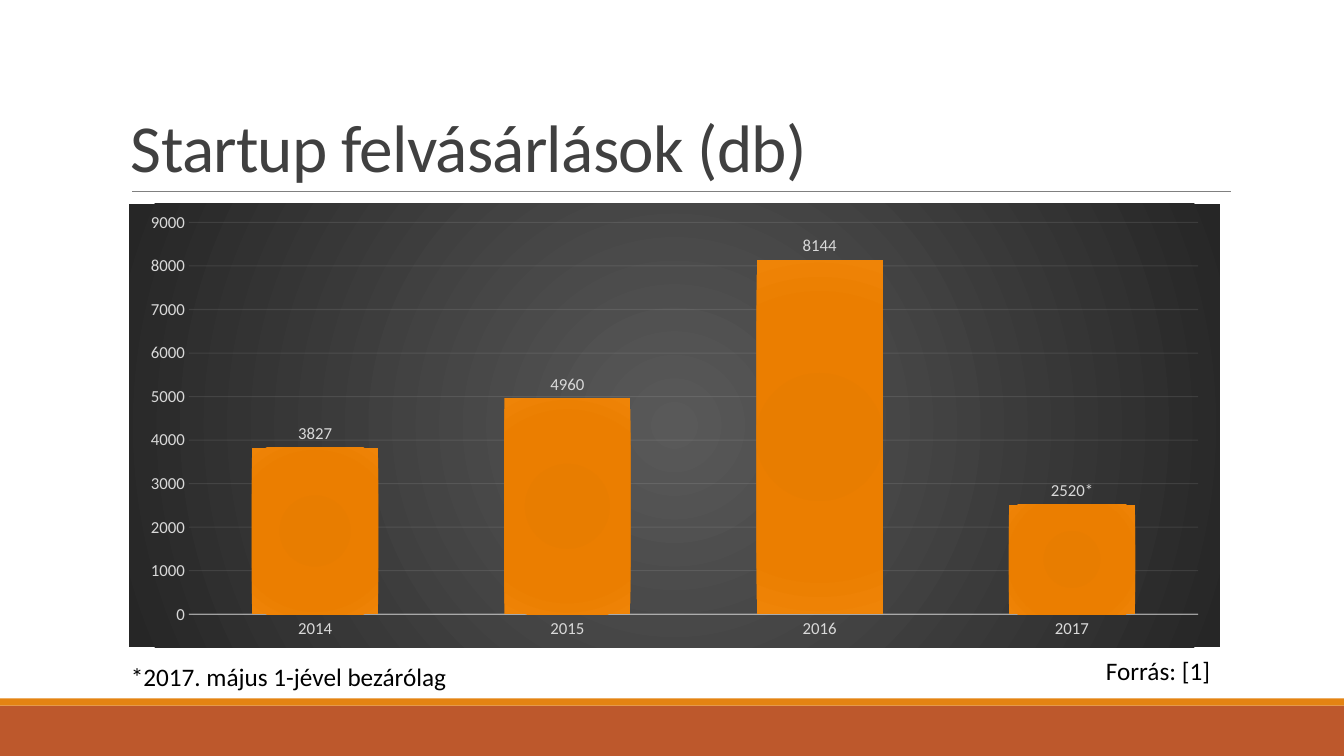
from dataclasses import dataclass

from lxml.etree import SubElement
from pptx import Presentation
from pptx.chart.chart import Chart
from pptx.chart.data import CategoryChartData
from pptx.dml.color import RGBColor
from pptx.enum.chart import XL_CHART_TYPE, XL_LABEL_POSITION, XL_TICK_MARK
from pptx.enum.shapes import MSO_CONNECTOR, MSO_SHAPE
from pptx.enum.text import MSO_ANCHOR, MSO_AUTO_SIZE, PP_ALIGN
from pptx.oxml import parse_xml
from pptx.oxml.ns import nsdecls, qn
from pptx.slide import Slide
from pptx.text.text import Font
from pptx.util import Emu, Pt

EMU_PER_PX = 9144
FONT_NAME = "Calibri"
RUST = RGBColor(0xBD, 0x58, 0x2C)
ORANGE = RGBColor(0xE4, 0x83, 0x12)
GREY = RGBColor(0x80, 0x80, 0x80)
CHARCOAL = RGBColor(0x40, 0x40, 0x40)
BLACK = RGBColor(0, 0, 0)
LABEL_GREY = RGBColor(0xD9, 0xD9, 0xD9)
OFF_WHITE = RGBColor(0xF2, 0xF2, 0xF2)
BACKDROP_STOPS = {0: RGBColor(0x59, 0x59, 0x59), 100: RGBColor(0x26, 0x26, 0x26)}
COLUMN_STOPS = {
    0: RGBColor(0xE5, 0x7B, 0x00),
    34: RGBColor(0xE8, 0x7D, 0x00),
    70: RGBColor(0xEB, 0x7E, 0x00),
    100: RGBColor(0xEF, 0x84, 0x07),
}
ACQUISITIONS = {"2014": 3827, "2015": 4960, "2016": 8144, "2017": 2520}
PARTIAL_YEAR_LABEL = "2520*"


@dataclass(frozen=True)
class Box:
    """Place and size in px."""

    left: int
    top: int
    width: int
    height: int

    def emu(self) -> tuple[Emu, Emu, Emu, Emu]:
        """Return the four lengths in EMU."""
        return px(self.left), px(self.top), px(self.width), px(self.height)


@dataclass(frozen=True)
class Band:
    """A coloured strip across the foot of the slide."""

    box: Box
    color: RGBColor


@dataclass(frozen=True)
class Note:
    """A line of text below the chart."""

    box: Box
    text: str


BANDS = (
    Band(Box(0, 700, 1333, 50), RUST),
    Band(Box(0, 693, 1333, 7), ORANGE),
)
NOTES = (
    Note(Box(120, 651, 550, 40), "*2017. május 1-jével bezárólag"),
    Note(Box(1087, 645, 265, 40), "Forrás: [1]"),
)


def px(length: int) -> Emu:
    """Turn px into EMU."""
    return Emu(length * EMU_PER_PX)


def style_font(font: Font, size: float, color: RGBColor) -> None:
    """Set the typeface, size and colour of a font."""
    font.name = FONT_NAME
    font.size = Pt(size)
    font.color.rgb = color


def add_text(slide: Slide, box: Box, text: str, *, size: float = 18,
             color: RGBColor = BLACK, anchor: MSO_ANCHOR = MSO_ANCHOR.TOP,
             autosize: MSO_AUTO_SIZE = MSO_AUTO_SIZE.SHAPE_TO_FIT_TEXT,
             line_spacing: float = 1.0, tracking: float = 0) -> None:
    """Add a left-aligned text box."""
    frame = slide.shapes.add_textbox(*box.emu()).text_frame
    frame.word_wrap = True
    frame.auto_size = autosize
    frame.vertical_anchor = anchor
    paragraph = frame.paragraphs[0]
    paragraph.alignment = PP_ALIGN.LEFT
    paragraph.line_spacing = line_spacing
    run = paragraph.add_run()
    run.text = text
    style_font(run.font, size, color)
    if tracking:
        run.font._element.set("spc", str(round(tracking * 100)))


def add_band(slide: Slide, band: Band) -> None:
    """Add a borderless strip."""
    strip = slide.shapes.add_shape(MSO_SHAPE.RECTANGLE, *band.box.emu())
    strip.shadow.inherit = False
    strip.fill.solid()
    strip.fill.fore_color.rgb = band.color
    strip.line.fill.background()


def add_rule(slide: Slide, left: int, right: int, top: int) -> None:
    """Add the thin line below the title."""
    rule = slide.shapes.add_connector(
        MSO_CONNECTOR.STRAIGHT, px(left), px(top), px(right), px(top))
    rule.line.color.rgb = GREY
    rule.line.width = Pt(0.5)
    SubElement(rule.element.find(qn("p:spPr")), qn("a:effectLst"))


def radial_fill(stops: dict[int, RGBColor], center: int) -> str:
    """Return the XML of a circular gradient."""
    stop_list = "".join(
        f'<a:gs pos="{at * 1000}"><a:srgbClr val="{color}"/></a:gs>'
        for at, color in stops.items())
    edges = " ".join(f'{side}="{center * 1000}"' for side in "ltrb")
    return (f'<a:gradFill {nsdecls("a")} rotWithShape="1"><a:gsLst>{stop_list}</a:gsLst>'
            f'<a:path path="circle"><a:fillToRect {edges}/></a:path></a:gradFill>')


def set_opacity(chart: Chart, line_path: str, percent: int) -> None:
    """Make the line of a chart part translucent."""
    for color in chart.element.xpath(f".//{line_path}/c:spPr/a:ln//a:srgbClr"):
        SubElement(color, qn("a:alpha"), val=str(percent * 1000))


def style_axes(chart: Chart) -> None:
    """Format both axes and the gridlines."""
    years, counts = chart.category_axis, chart.value_axis
    for axis in (years, counts):
        axis.major_tick_mark = axis.minor_tick_mark = XL_TICK_MARK.NONE
        style_font(axis.tick_labels.font, 12, LABEL_GREY)
    counts.minimum_scale, counts.maximum_scale, counts.major_unit = 0, 9000, 1000
    counts.format.line.fill.background()
    for line, width in ((years.format.line, 1), (counts.major_gridlines.format.line, 0.75)):
        line.color.rgb = OFF_WHITE
        line.width = Pt(width)
    set_opacity(chart, "c:catAx", 54)
    set_opacity(chart, "c:majorGridlines", 10)


def style_columns(chart: Chart) -> None:
    """Format the columns and their labels."""
    plot = chart.plots[0]
    plot.vary_by_categories = False
    plot.gap_width, plot.overlap = 100, -24
    columns = plot.series[0]
    columns.format.fill.solid()
    solid = chart.element.xpath(".//c:ser/c:spPr/a:solidFill")[0]
    solid.getparent().replace(solid, parse_xml(radial_fill(COLUMN_STOPS, 100)))
    labels = columns.data_labels
    labels.show_value = True
    labels.position = XL_LABEL_POSITION.OUTSIDE_END
    style_font(labels.font, 12, LABEL_GREY)
    partial_year = columns.points[len(ACQUISITIONS) - 1].data_label
    partial_year.position = XL_LABEL_POSITION.OUTSIDE_END
    run = partial_year.text_frame.paragraphs[0].add_run()
    run.text = PARTIAL_YEAR_LABEL
    style_font(run.font, 12, LABEL_GREY)


def add_acquisitions_chart(slide: Slide, box: Box) -> None:
    """Add the column chart on its dark backdrop."""
    data = CategoryChartData()
    data.categories = list(ACQUISITIONS)
    data.add_series("Series 1", list(ACQUISITIONS.values()))
    chart = slide.shapes.add_chart(XL_CHART_TYPE.COLUMN_CLUSTERED, *box.emu(), data).chart
    chart.has_title = chart.has_legend = False
    style_font(chart.font, 10, BLACK)
    backdrop = parse_xml(f'<c:spPr {nsdecls("c", "a")}>{radial_fill(BACKDROP_STOPS, 50)}'
                         '<a:ln><a:noFill/></a:ln></c:spPr>')
    chart.element.find(qn("c:chart")).addnext(backdrop)
    style_axes(chart)
    style_columns(chart)


def main() -> None:
    """Build and save the slide."""
    deck = Presentation()
    deck.slide_width, deck.slide_height = px(1333), px(750)
    slide = deck.slides.add_slide(deck.slide_layouts[6])
    for band in BANDS:
        add_band(slide, band)
    add_rule(slide, 131, 1221, 190)
    add_text(slide, Box(120, 31, 1100, 159), "Startup felvásárlások (db)", size=48,
             color=CHARCOAL, anchor=MSO_ANCHOR.BOTTOM, autosize=MSO_AUTO_SIZE.NONE,
             line_spacing=0.85, tracking=-0.5)
    add_acquisitions_chart(slide, Box(128, 202, 1082, 440))
    for note in NOTES:
        add_text(slide, note.box, note.text)
    deck.save("out.pptx")


if __name__ == "__main__":
    main()
